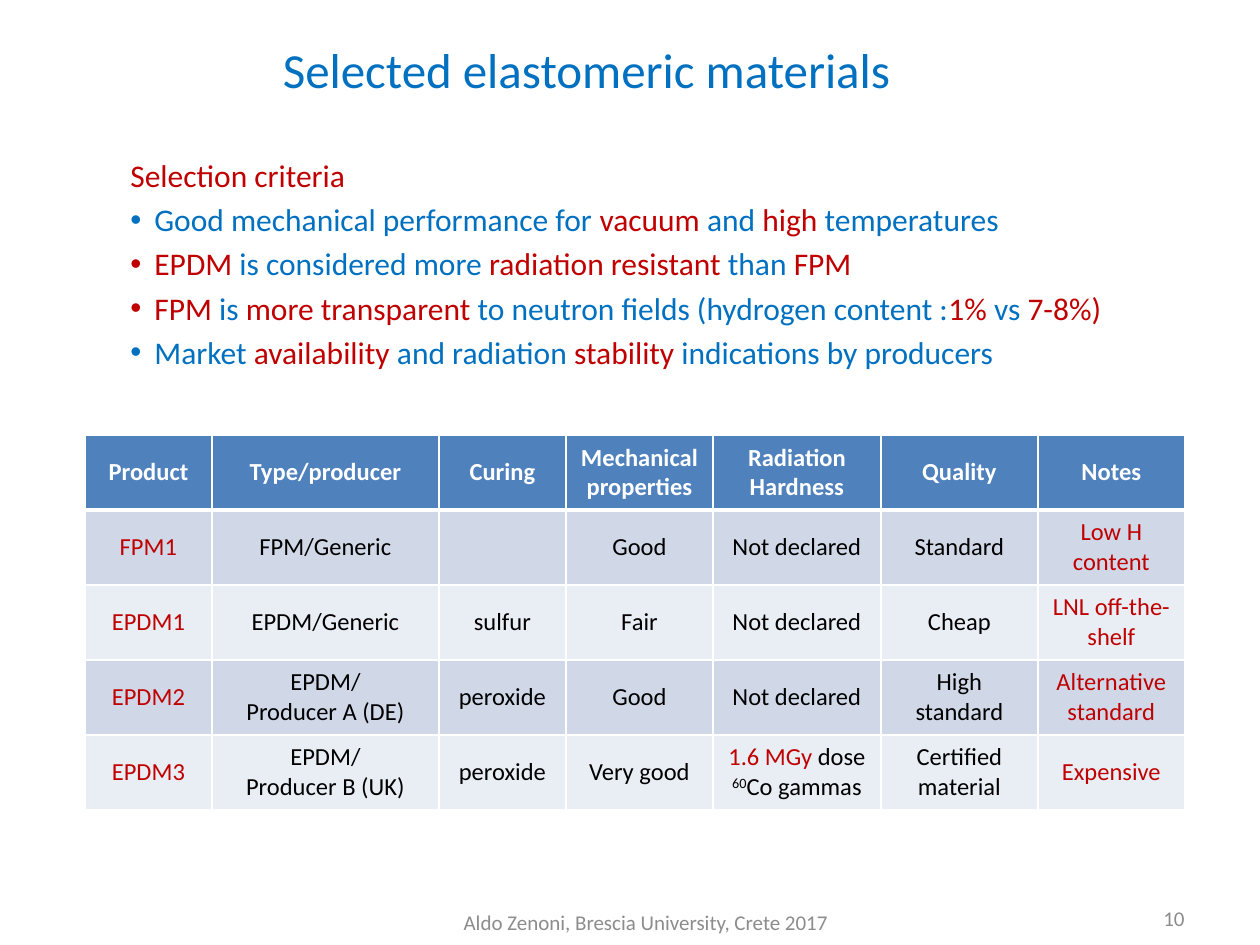
import pptx
import pptx.util
import pptx.dml.color
import pptx.enum.text
import pptx.oxml
import pptx.oxml.ns

RGBColor = pptx.dml.color.RGBColor
Pt = pptx.util.Pt
ALIGN = pptx.enum.text.PP_ALIGN
ANCHOR = pptx.enum.text.MSO_ANCHOR
NS = pptx.oxml.ns.nsdecls("a")
PX = 914400 / 126

BLUE = RGBColor(0x00, 0x70, 0xC0)
RED = RGBColor(0xC0, 0x00, 0x00)
BLACK = RGBColor(0x00, 0x00, 0x00)
WHITE = RGBColor(0xFF, 0xFF, 0xFF)
GREY = RGBColor(0x8C, 0x8C, 0x8C)
HEADER = RGBColor(0x4F, 0x81, 0xBD)
BANDS = [RGBColor(0xE9, 0xED, 0xF4), RGBColor(0xD0, 0xD8, 0xE8)]

prs = pptx.Presentation()
prs.slide_width = round(1260 * PX)
prs.slide_height = round(945 * PX)
s = prs.slides.add_slide(prs.slide_layouts[6])


def add_box(x, y, w, h, anchor=ANCHOR.TOP):
    sp = s.shapes.add_textbox(*(round(v * PX) for v in (x, y, w, h)))
    tf = sp.text_frame
    tf.word_wrap = True
    tf.vertical_anchor = anchor
    return tf


def add_run(p, text, size, color, bold=False):
    r = p.add_run()
    r.text = text
    r.font.name = "Calibri"
    r.font.size = Pt(size)
    r.font.bold = bold
    r.font.color.rgb = color
    return r


# Footer and slide number
for x, y, w, h, align, text in [
    (343, 900, 606, 44, ALIGN.CENTER, "Aldo Zenoni, Brescia University, Crete 2017"),
    (903, 893, 294, 50, ALIGN.RIGHT, "10"),
]:
    p = add_box(x, y, w, h, ANCHOR.MIDDLE).paragraphs[0]
    p.alignment = align
    add_run(p, text, 12, GREY)

# Title with a soft text shadow
p = add_box(203, 33, 767, 72).paragraphs[0]
p.alignment = ALIGN.CENTER
r = add_run(p, "Selected elastomeric materials", 28, BLUE)
shadow = pptx.oxml.parse_xml(
    f'<a:effectLst {NS}><a:outerShdw blurRad="38100" dist="38100" dir="2700000" algn="tl">'
    '<a:srgbClr val="000000"><a:alpha val="43000"/></a:srgbClr></a:outerShdw></a:effectLst>')
r.font.fill._xPr.find(pptx.oxml.ns.qn("a:solidFill")).addnext(shadow)

# Selection criteria
criteria = [
    [("Good mechanical performance for ", BLUE), ("vacuum", RED), (" and ", BLUE),
     ("high", RED), (" temperatures", BLUE)],
    [("EPDM", RED), (" is considered more ", BLUE), ("radiation resistant ", RED),
     ("than ", BLUE), ("FPM", RED)],
    [("FPM", RED), (" is ", BLUE), ("more transparent ", RED),
     ("to neutron fields (hydrogen content :", BLUE), ("1% ", RED), ("vs ", BLUE),
     ("7-8%)", RED)],
    [("Market ", BLUE), ("availability ", RED), ("and radiation ", BLUE),
     ("stability", RED), (" indications by producers", BLUE)],
]
tf = add_box(118, 150, 1008, 232)
add_run(tf.paragraphs[0], "Selection criteria", 18, RED)
indent = round(24 * PX)
for runs in criteria:
    p = tf.add_paragraph()
    p.space_before = Pt(3.6)
    pPr = p._p.get_or_add_pPr()
    pPr.set("marL", str(indent))
    pPr.set("indent", str(-indent))
    pPr.append(pptx.oxml.parse_xml(f'<a:buFont {NS} typeface="Arial"/>'))
    pPr.append(pptx.oxml.parse_xml(f'<a:buChar {NS} char="•"/>'))
    for text, color in runs:
        add_run(p, text, 18, color)

# Materials table: a newline in a cell starts a new paragraph
rows = [
    ["Product", "Type/producer", "Curing", "Mechanical properties", "Radiation Hardness",
     "Quality", "Notes"],
    ["FPM1", "FPM/Generic", "", "Good", "Not declared", "Standard", "Low H content"],
    ["EPDM1", "EPDM/Generic", "sulfur", "Fair", "Not declared", "Cheap", "LNL off-the-shelf"],
    ["EPDM2", "EPDM/\nProducer A (DE)", "peroxide", "Good", "Not declared",
     "High standard", "Alternative standard"],
    ["EPDM3", "EPDM/\nProducer B (UK)", "peroxide", "Very good", "",
     "Certified material", "Expensive"],
]
widths = [127, 227, 127, 147, 168, 157, 147]
ROW_H = 75
table = s.shapes.add_table(
    len(rows), len(widths), round(85 * PX), round(435 * PX),
    round(sum(widths) * PX), round(ROW_H * len(rows) * PX)).table
for column, width in zip(table.columns, widths):
    column.width = round(width * PX)
for i, row in enumerate(rows):
    table.rows[i].height = round(ROW_H * PX)
    for j, text in enumerate(row):
        cell = table.cell(i, j)
        cell.vertical_anchor = ANCHOR.MIDDLE
        tcPr = cell._tc.get_or_add_tcPr()
        for side in "LRTB":
            thick = (i, side) in [(0, "B"), (1, "T")]
            tcPr.append(pptx.oxml.parse_xml(
                f'<a:ln{side} {NS} w="{Pt(3 if thick else 1)}"><a:solidFill>'
                f'<a:srgbClr val="{WHITE}"/></a:solidFill></a:ln{side}>'))
        cell.fill.solid()
        cell.fill.fore_color.rgb = HEADER if i == 0 else BANDS[i % 2]
        color = WHITE if i == 0 else RED if j in (0, len(row) - 1) else BLACK
        tf = cell.text_frame
        for k, line in enumerate(text.split("\n")):
            p = tf.add_paragraph() if k else tf.paragraphs[0]
            p.alignment = ALIGN.CENTER
            if line:
                add_run(p, line, 14, color, bold=i == 0)

# Measured radiation dose, with the isotope number raised
p = table.cell(4, 4).text_frame.paragraphs[0]
add_run(p, "1.6 MGy ", 14, RED)
add_run(p, "dose ", 14, BLACK)
r = add_run(p, "60", 14, BLACK)
r._r.get_or_add_rPr().set("baseline", "30000")
add_run(p, "Co gammas", 14, BLACK)

prs.save("out.pptx")
